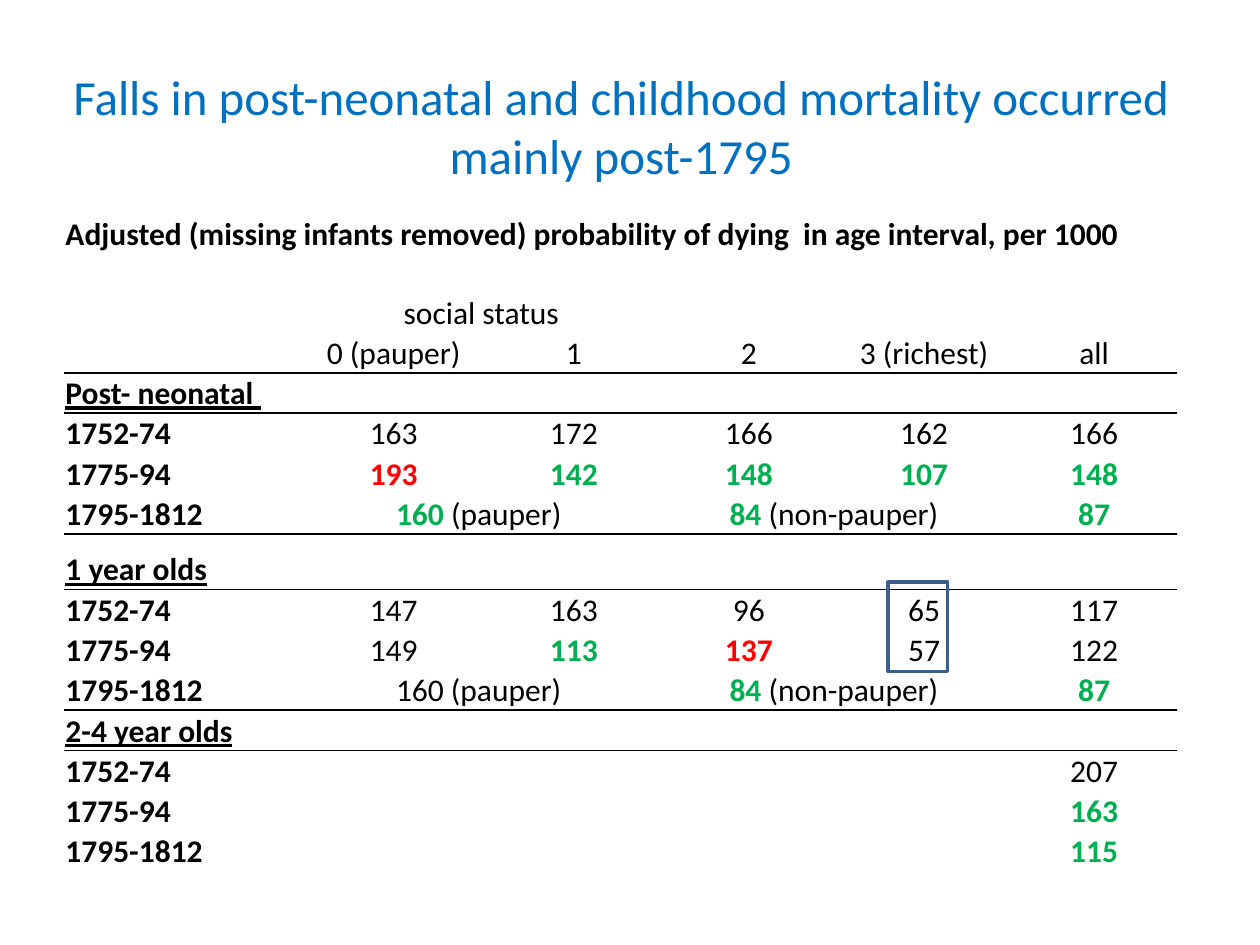
from lxml import etree
from pptx import Presentation
from pptx.dml.color import RGBColor
from pptx.enum import shapes, text
from pptx.oxml import ns
from pptx.util import Inches, Pt

BLACK, BLUE, GREEN, RED = "000000", "0070C0", "00B050", "FF0000"


def color(value):
    return RGBColor.from_string(value)


def write(frame, *runs, size=18, align=text.PP_ALIGN.CENTER, bold=False, underline=False):
    paragraph = frame.paragraphs[0]
    paragraph.alignment = align
    for content, tint in runs:
        run = paragraph.add_run()
        run.text = content
        run.font.name = "Calibri"
        run.font.size = Pt(size)
        run.font.bold = bold or tint in (GREEN, RED)
        run.font.underline = underline
        run.font.color.rgb = color(tint)


presentation = Presentation()
presentation.slide_width, presentation.slide_height = Inches(10), Inches(7.5)
slide = presentation.slides.add_slide(presentation.slide_layouts[6])

title = slide.shapes.add_textbox(Inches(0.43), Inches(0.37), Inches(9), Inches(1.25)).text_frame
title.word_wrap = True
title.vertical_anchor = text.MSO_ANCHOR.MIDDLE
write(title, ("Falls in post-neonatal and childhood mortality occurred mainly post-1795", BLUE), size=28)

non_pauper = [("84 ", GREEN), ("(non-pauper)", BLACK)]
rows = [
    ("Adjusted (missing infants removed) probability of dying  in age interval, per 1000", {}),
    ("", {1: "social status"}),
    ("", {1: "0 (pauper)", 2: "1", 4: "2", 5: "3 (richest)", 6: "all"}),
    ("Post- neonatal ", {}),
    ("1752-74", {1: "163", 2: "172", 4: "166", 5: "162", 6: "166"}),
    ("1775-94", {1: [("193", RED)], 2: [("142", GREEN)], 4: [("148", GREEN)],
                 5: [("107", GREEN)], 6: [("148", GREEN)]}),
    ("1795-1812", {1: [("160 ", GREEN), ("(pauper)", BLACK)], 3: non_pauper, 6: [("87", GREEN)]}),
    ("1 year olds", {}),
    ("1752-74", {1: "147", 2: "163", 4: "96", 5: "65", 6: "117"}),
    ("1775-94", {1: "149", 2: [("113", GREEN)], 4: [("137", RED)], 5: "57", 6: "122"}),
    ("1795-1812", {1: "160 (pauper)", 3: non_pauper, 6: [("87", GREEN)]}),
    ("2-4 year olds", {}),
    ("1752-74", {6: "207"}),
    ("1775-94", {6: [("163", GREEN)]}),
    ("1795-1812", {6: [("115", GREEN)]}),
]
column_widths = [1.88, 1.47, 1.35, 0.04, 1.39, 1.39, 1.31]
row_heights = {0: 0.62, 7: 0.44}
ruled_rows = (2, 6, 10)
merges = {0: [(0, 6)], 1: [(1, 3)], 6: [(1, 2), (3, 5)], 7: [(1, 3)]}
merges.update({row: [(2, 3)] for row in (2, 3, 4, 5, 8, 9)})
merges.update({row: [(1, 2), (3, 5)] for row in range(10, 15)})

table = slide.shapes.add_table(len(rows), len(column_widths), Inches(0.51), Inches(1.7),
                               Inches(8.82), Inches(5.21)).table
table.first_row = table.horz_banding = False
style = table._tbl.tblPr.find(ns.qn("a:tableStyleId"))
style.text = "{2D5ABB26-0587-4C30-8999-92F81FD0307C}"
for column, width in zip(table.columns, column_widths):
    column.width = Inches(width)

for row, (label, values) in enumerate(rows):
    table.rows[row].height = Inches(row_heights.get(row, 0.32))
    for first, last in merges[row]:
        table.cell(row, first).merge(table.cell(row, last))
    for column in range(len(column_widths)):
        cell = table.cell(row, column)
        cell.margin_left = cell.margin_right = cell.margin_top = Inches(0.01)
        cell.margin_bottom = 0
        cell.vertical_anchor = text.MSO_ANCHOR.BOTTOM if row else text.MSO_ANCHOR.TOP
        for edge, ruled_row in (("a:lnT", row - 1), ("a:lnB", row)):
            if ruled_row in ruled_rows:
                line = etree.SubElement(cell._tc.get_or_add_tcPr(), ns.qn(edge), w=str(Pt(1)))
                fill = etree.SubElement(line, ns.qn("a:solidFill"))
                etree.SubElement(fill, ns.qn("a:srgbClr"), val=BLACK)
        cell.fill.background()
        if column == 0 and label:
            write(cell.text_frame, (label, BLACK), align=text.PP_ALIGN.LEFT, bold=True,
                  underline=row > 0 and not values)
        elif column in values:
            value = values[column]
            write(cell.text_frame, *([(value, BLACK)] if isinstance(value, str) else value))

highlight = slide.shapes.add_shape(shapes.MSO_SHAPE.RECTANGLE, Inches(7.05), Inches(4.62),
                                   Inches(0.47), Inches(0.71))
highlight.shadow.inherit = False
highlight.fill.background()
highlight.line.color.rgb = color("3A5F8C")
highlight.line.width = Pt(2)

presentation.save("out.pptx")
